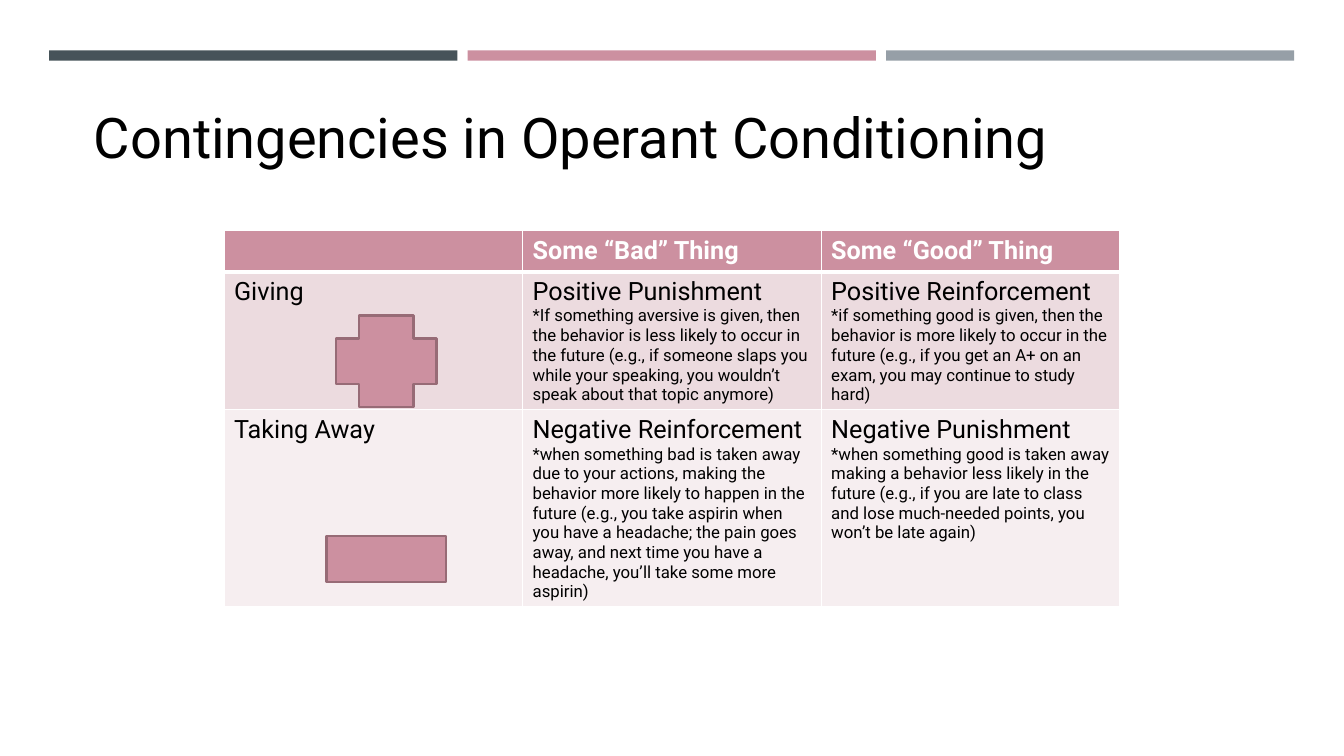
from lxml import etree
from pptx import Presentation
from pptx import util as u
from pptx.dml.color import RGBColor
from pptx.enum import shapes, text
from pptx.oxml import ns

COLORS = {
    "slate": "465359", "rose": "CC90A0", "gray": "969FA7", "outline": "976B76",
    "giving": "ECDBDF", "taking": "F6EEF0", "white": "FFFFFF", "black": "000000",
}

# Each cell holds a heading and, where there is one, an explanation
ROWS = [
    ("rose", 29.2, [
        [],
        ["Some “Bad” Thing"],
        ["Some “Good” Thing"],
    ]),
    ("giving", 98, [
        ["Giving"],
        ["Positive Punishment",
         "*If something aversive is given, then the behavior is less likely to occur "
         "in the future (e.g., if someone slaps you while your speaking, you wouldn’t "
         "speak about that topic anymore)"],
        ["Positive Reinforcement",
         "*if something good is given, then the behavior is more likely to occur in "
         "the future (e.g., if you get an A+ on an exam, you may continue to study hard)"],
    ]),
    ("taking", 140.5, [
        ["Taking Away"],
        ["Negative Reinforcement",
         "*when something bad is taken away due to your actions, making the behavior "
         "more likely to happen in the future (e.g., you take aspirin when you have a "
         "headache; the pain goes away, and next time you have a headache, you’ll take "
         "some more aspirin)"],
        ["Negative Punishment",
         "*when something good is taken away making a behavior less likely in the "
         "future (e.g., if you are late to class and lose much-needed points, you "
         "won’t be late again)"],
    ]),
]


class SlideBuilder:
    def __init__(self, page, font):
        self.page = page
        self.font = font

    def color(self, name):
        return RGBColor.from_string(COLORS[name])

    def run(self, para, words, size, color="black", bold=False):
        span = para.add_run()
        span.text = words
        span.font.name = self.font
        span.font.size = u.Pt(size)
        span.font.bold = bold
        span.font.color.rgb = self.color(color)

    def title(self, words, left, top, width, height):
        box = self.page.shapes.title
        box.left, box.top, box.width, box.height = map(u.Pt, (left, top, width, height))
        frame = box.text_frame
        frame.word_wrap = True
        frame.auto_size = text.MSO_AUTO_SIZE.NONE
        frame.vertical_anchor = text.MSO_ANCHOR.TOP
        para = frame.paragraphs[0]
        para.alignment = text.PP_ALIGN.LEFT
        para.line_spacing = 1.0
        self.run(para, words, 40)

    def shape(self, kind, left, top, width, height, fill, line=None):
        shape = self.page.shapes.add_shape(kind, *map(u.Pt, (left, top, width, height)))
        shape.shadow.inherit = False
        shape.fill.solid()
        shape.fill.fore_color.rgb = self.color(fill)
        if line:
            shape.line.color.rgb = self.color(line)
            shape.line.width = u.Pt(1.75)
        else:
            shape.line.fill.background()

    def borders(self, cell, bottom_width):
        properties = cell._tc.get_or_add_tcPr()
        sides = {"lnL": 1, "lnR": 1, "lnT": 1, "lnB": bottom_width}
        for index, (side, width) in enumerate(sides.items()):
            line = etree.Element(ns.qn("a:" + side), w=str(u.Pt(width)))
            fill = etree.SubElement(line, ns.qn("a:solidFill"))
            etree.SubElement(fill, ns.qn("a:srgbClr"), val=COLORS["white"])
            properties.insert(index, line)

    def table(self, rows, left, top, column_width):
        columns = len(rows[0][2])
        height = sum(row[1] for row in rows)
        frame = self.page.shapes.add_table(
            len(rows), columns, *map(u.Pt, (left, top, column_width * columns, height)))
        table = frame.table
        for column in table.columns:
            column.width = u.Pt(column_width)
        for r, (fill, row_height, entries) in enumerate(rows):
            table.rows[r].height = u.Pt(row_height)
            header = r == 0
            for c, lines in enumerate(entries):
                cell = table.cell(r, c)
                cell.fill.solid()
                cell.fill.fore_color.rgb = self.color(fill)
                self.borders(cell, 3 if header else 1)
                for i, words in enumerate(lines):
                    paras = cell.text_frame
                    para = paras.add_paragraph() if i else paras.paragraphs[0]
                    self.run(para, words, 12 if i else 18,
                             "white" if header else "black", header)


def main():
    deck = Presentation()
    deck.slide_width, deck.slide_height = u.Pt(960), u.Pt(540)
    page = deck.slides.add_slide(deck.slide_layouts[5])
    builder = SlideBuilder(page, "Roboto")
    kinds = shapes.MSO_SHAPE

    # Bars across the top
    for i, fill in enumerate(["slate", "rose", "gray"]):
        builder.shape(kinds.RECTANGLE, 35.1 + 298.9 * i, 36, 291.6, 7.4, fill)

    # Title and table of contingencies
    builder.title("Contingencies in Operant Conditioning", 59.8, 69.8, 841, 55.4)
    builder.table(ROWS, 160, 164.9, 213.3)

    # Plus and minus signs
    builder.shape(kinds.CROSS, 240.2, 225.3, 71.6, 65.5, "rose", "outline")
    builder.shape(kinds.MATH_MINUS, 218, 329, 116, 140.4, "rose", "outline")

    deck.save("out.pptx")


if __name__ == "__main__":
    main()
